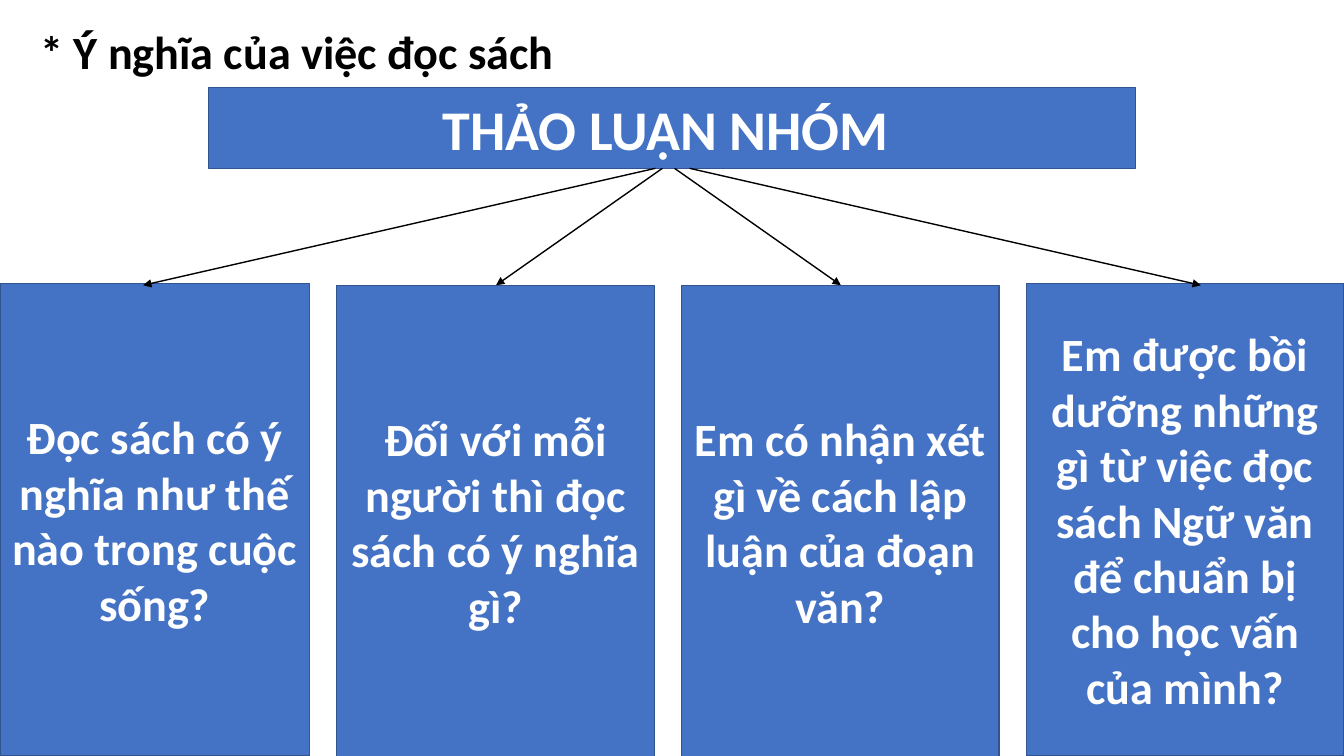
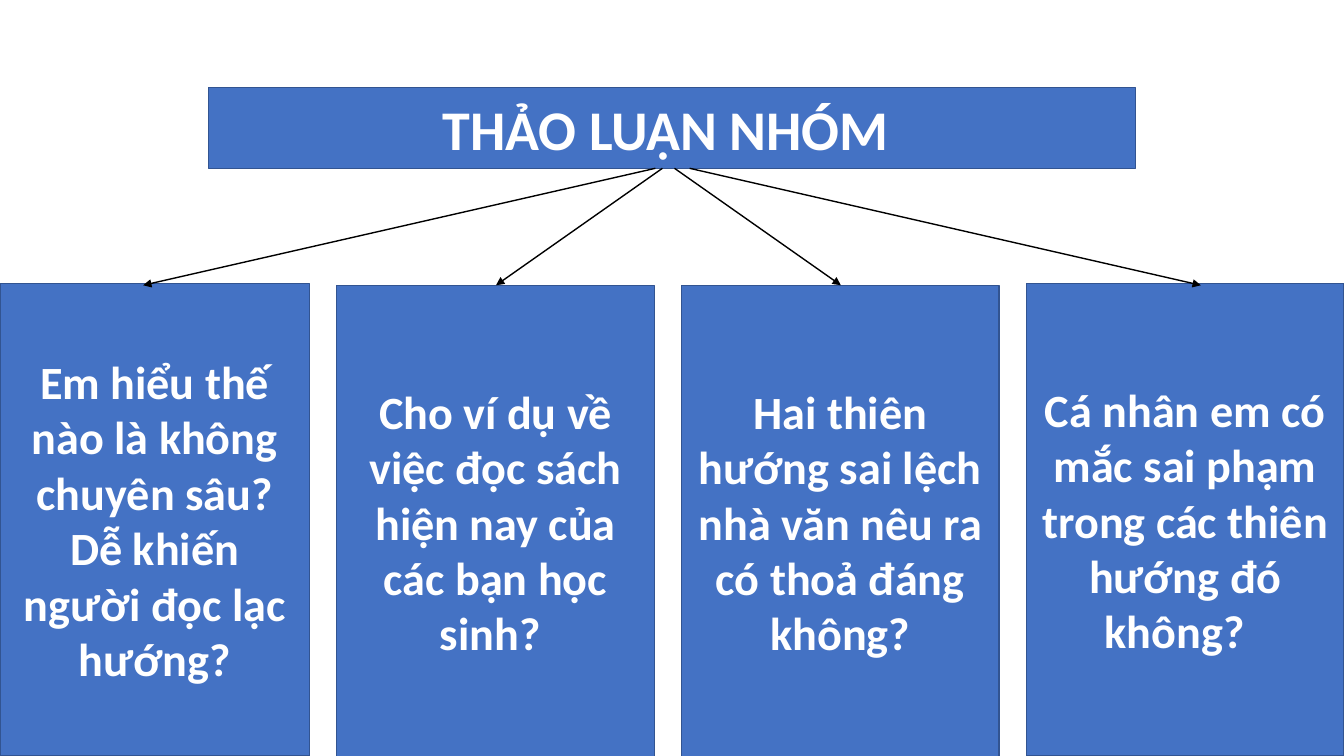
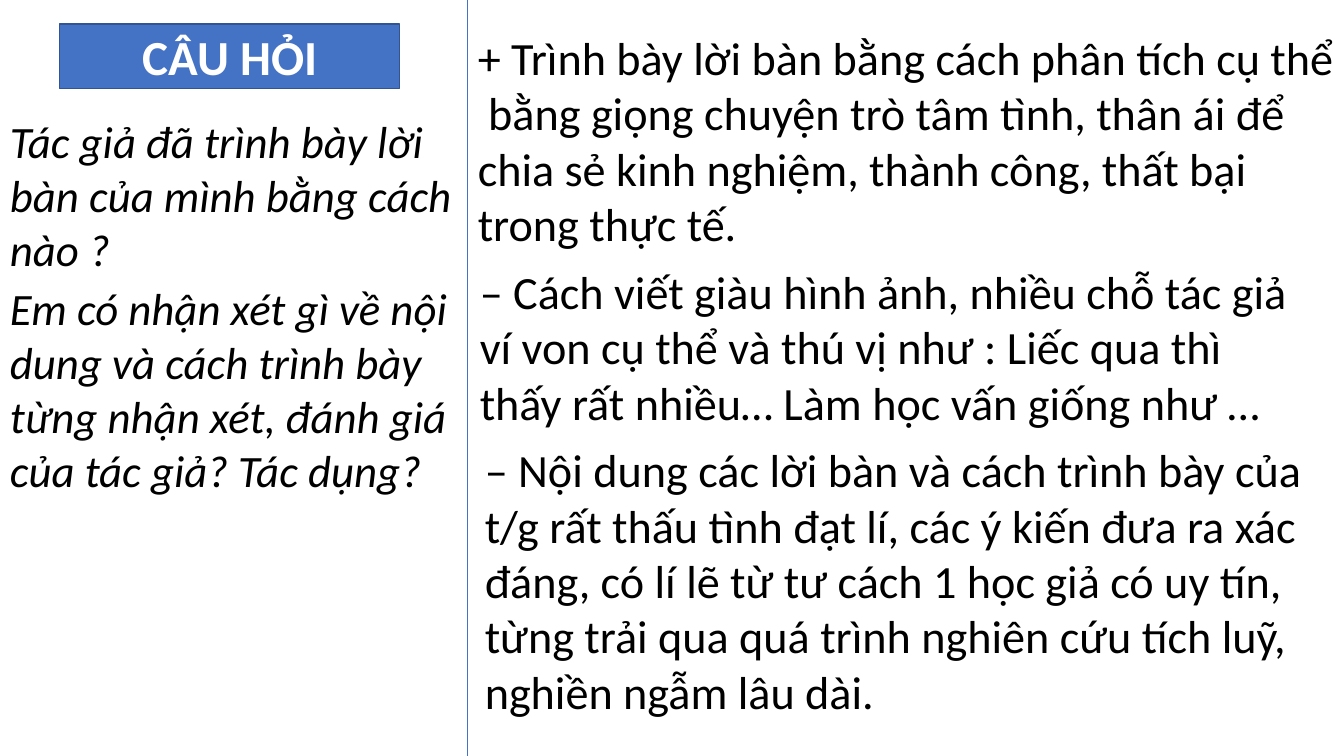
from lxml import etree
from pptx import Presentation
from pptx.dml.color import RGBColor
from pptx.enum.shapes import MSO_CONNECTOR as Connector, MSO_SHAPE as Preset
from pptx.enum.text import MSO_ANCHOR as Anchor, MSO_AUTO_SIZE as AutoSize, PP_ALIGN as Align
from pptx.oxml.ns import qn
from pptx.util import Inches, Pt

COLORS = {"blue": "4472C4", "outline": "325491", "black": "000000", "white": "FFFFFF"}
FONT = "Calibri"
WIDTH, HEIGHT = 13.33, 7.5

BANNER = "THẢO LUẬN NHÓM "
BANNER_BOX = (2.07, 0.87, 9.19, 0.8)
ARROWS = [(6.5, 1.42), (6.57, 4.92), (6.69, 8.34), (6.84, 11.91)]
CARD_WIDTH, CARD_HEIGHT, CARD_PITCH = 3.15, 4.69, 3.42
CARD_TOPS = [2.81, 2.83, 2.83, 2.81]

DISCUSSIONS = [
    {
        "heading": "* Ý nghĩa của việc đọc sách",
        "questions": [
            "Đọc sách có ý nghĩa như thế nào trong cuộc sống?",
            "Đối với mỗi người thì đọc sách có ý nghĩa gì?",
            "Em có nhận xét gì về cách lập luận của đoạn văn?",
            "Em được bồi dưỡng những gì từ việc đọc sách Ngữ văn để chuẩn bị cho học vấn của mình?",
        ],
    },
    {
        "heading": None,
        "questions": [
            "Em hiểu thế nào là không chuyên sâu? Dễ khiến người đọc lạc hướng?",
            "Cho ví dụ về việc đọc sách hiện nay của các bạn học sinh? ",
            "Hai thiên hướng sai lệch nhà văn nêu ra có thoả đáng không?",
            "Cá nhân em có mắc sai phạm trong các thiên hướng đó không?  ",
        ],
    },
]

QUESTION_LABEL = "CÂU HỎI"
DIVIDER_X = 4.64
QUESTIONS = [
    ((0, 1.08, 4.8, 1.72), "Tác giả đã trình bày lời bàn của mình bằng cách nào ?"),
    ((0, 2.74, 5.05, 2.26),
     "Em có nhận xét gì về nội dung và cách trình bày từng nhận xét, đánh giá của tác giả? Tác dụng?"),
]
ANSWERS = [
    ((4.64, 0.24, 8.69, 2.32),
     "+ Trình bày lời bàn bằng cách phân tích cụ thể  bằng giọng chuyện trò tâm tình, "
     "thân ái để chia sẻ kinh nghiệm, thành công, thất bại trong thực tế."),
    ((4.66, 2.56, 8.41, 1.77),
     "– Cách viết giàu hình ảnh, nhiều chỗ tác giả ví von cụ thể và thú vị như : "
     "Liếc qua thì thấy rất nhiều… Làm học vấn giống như …"),
    ((4.71, 4.33, 8.36, 2.88),
     "– Nội dung các lời bàn và cách trình bày của t/g rất thấu tình đạt lí, "
     "các ý kiến đưa ra xác đáng, có lí lẽ từ tư cách 1 học giả có uy tín, "
     "từng trải qua quá trình nghiên cứu tích luỹ, nghiền ngẫm lâu dài."),
]


def color(name):
    return RGBColor.from_string(COLORS[name])


def write(shape, text, size, ink="black", bold=False, italic=False, align=Align.LEFT):
    shape.text_frame.word_wrap = True
    paragraph = shape.text_frame.paragraphs[0]
    paragraph.alignment = align
    run = paragraph.add_run()
    run.text = text
    font = run.font
    font.name, font.size, font.bold, font.italic = FONT, Pt(size), bold, italic
    font.color.rgb = color(ink)


def add_text(slide, box, text, size, **style):
    shape = slide.shapes.add_textbox(*map(Inches, box))
    write(shape, text, size, **style)
    shape.text_frame.auto_size = AutoSize.SHAPE_TO_FIT_TEXT


def add_panel(slide, box, text=None, size=33):
    shape = slide.shapes.add_shape(Preset.RECTANGLE, *map(Inches, box))
    shape.shadow.inherit = False
    shape.fill.solid()
    shape.fill.fore_color.rgb = color("blue")
    shape.line.color.rgb = color("outline")
    shape.line.width = Pt(1)
    if text:
        shape.text_frame.vertical_anchor = Anchor.MIDDLE
        write(shape, text, size, ink="white", bold=True, align=Align.CENTER)


def add_line(slide, start, end, ink, width, arrow=False):
    line = slide.shapes.add_connector(Connector.STRAIGHT, *map(Inches, start + end))
    line.line.color.rgb = color(ink)
    line.line.width = Pt(width)
    if arrow:
        etree.SubElement(line.line._get_or_add_ln(), qn("a:tailEnd"), type="triangle")
    etree.SubElement(line._element.spPr, qn("a:effectLst"))


def build_discussion(slide, heading, questions):
    if heading:
        add_text(slide, (0.3, 0.18, 9.19, 0.66), heading, 33, bold=True)
    add_panel(slide, BANNER_BOX, BANNER, 40)
    first_left = WIDTH - CARD_WIDTH - CARD_PITCH * (len(questions) - 1)
    for index, (question, top) in enumerate(zip(questions, CARD_TOPS)):
        edge = first_left + index * CARD_PITCH
        left = max(0, edge)
        add_panel(slide, (left, top, edge + CARD_WIDTH - left, CARD_HEIGHT), question)
    banner_bottom = BANNER_BOX[1] + BANNER_BOX[3]
    for start_x, end_x in ARROWS:
        add_line(slide, (start_x, banner_bottom), (end_x, max(CARD_TOPS)), "black", 1, arrow=True)


def build_answers(slide):
    add_line(slide, (DIVIDER_X, 0), (DIVIDER_X, HEIGHT), "blue", 0.5)
    add_panel(slide, (0.59, 0.24, 3.37, 0.64))
    add_text(slide, (0.39, 0.21, 3.78, 0.69), QUESTION_LABEL, 35,
             ink="white", bold=True, align=Align.CENTER)
    for box, text in QUESTIONS:
        add_text(slide, box, text, 32, italic=True)
    for box, text in ANSWERS:
        add_text(slide, box, text, 33)


def main():
    presentation = Presentation()
    presentation.slide_width, presentation.slide_height = Inches(WIDTH), Inches(HEIGHT)
    blank = presentation.slide_layouts[6]
    for discussion in DISCUSSIONS:
        build_discussion(presentation.slides.add_slide(blank), **discussion)
    build_answers(presentation.slides.add_slide(blank))
    presentation.save("out.pptx")


if __name__ == "__main__":
    main()
